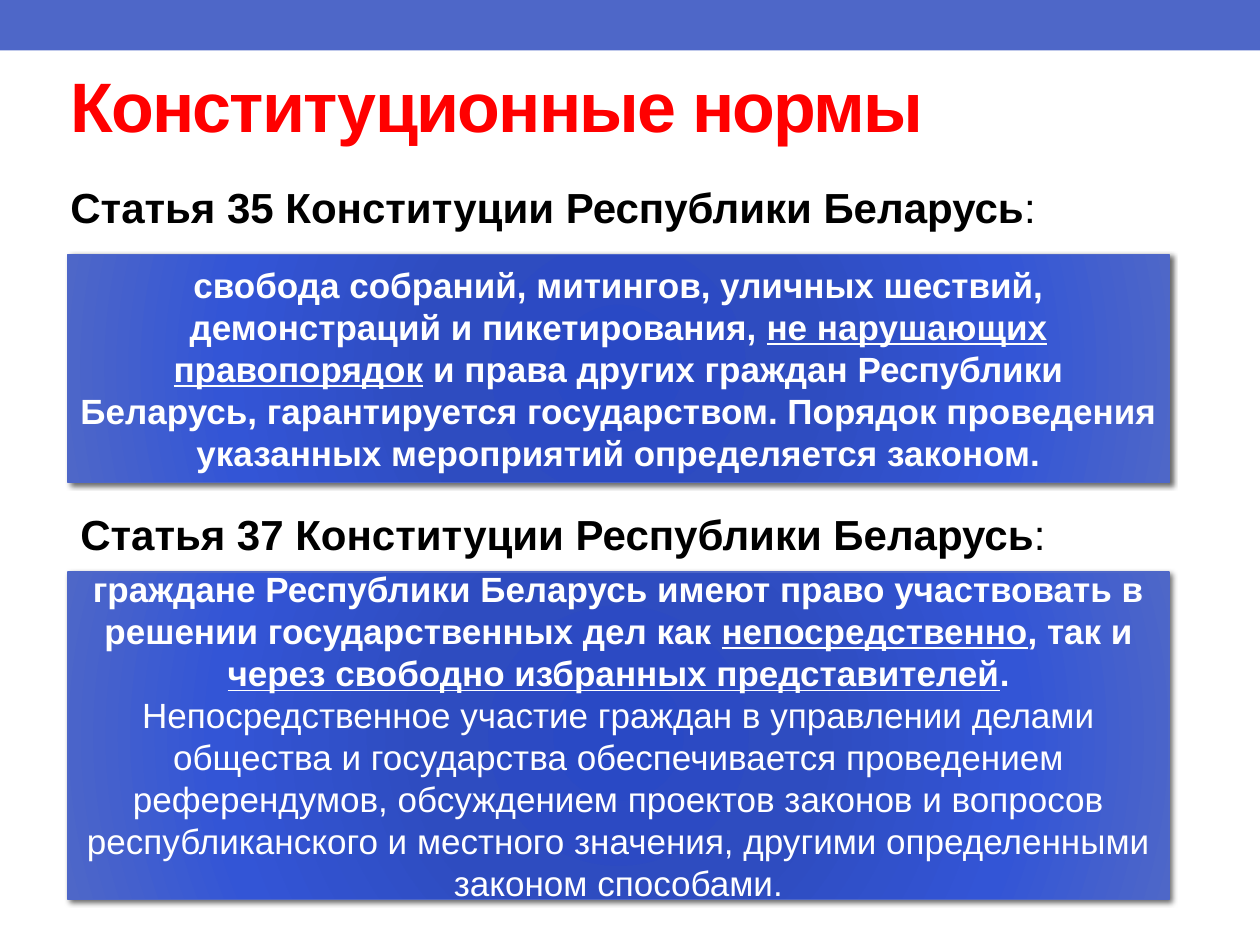
from dataclasses import dataclass

from lxml.etree import SubElement
from pptx import Presentation
from pptx.dml.color import RGBColor
from pptx.enum.shapes import MSO_SHAPE
from pptx.enum.text import MSO_ANCHOR, PP_ALIGN
from pptx.oxml import parse_xml
from pptx.oxml.ns import nsdecls, qn
from pptx.util import Cm, Pt


@dataclass(frozen=True)
class Theme:
    font: str = "Arial"
    accent: str = "4E67C8"
    title: str = "FF0000"
    heading: str = "000000"
    panel_text: str = "FFFFFF"
    shadow: str = "000000"
    gradient: tuple = ((0, "2949C5"), (34, "2E4CC0"), (70, "3355D6"), (100, "4E67C8"))
    title_size: int = 40
    heading_size: int = 24
    panel_size: int = 20


THEME = Theme()

# A run is (text, style letters): b = bold, u = underlined.
TITLE = [("Конституционные нормы", "b")]
ARTICLES = [
    {
        "heading": [("Статья 35 Конституции Республики Беларусь", "b"), (":", "")],
        "heading_box": (1.17, 3.53, 22.86, 1.6),
        "wrap": True,
        "panel": [
            ("свобода собраний, митингов, уличных шествий, демонстраций и пикетирования, ", "b"),
            ("не нарушающих правопорядок", "bu"),
            (" и права других граждан Республики Беларусь, гарантируется государством. "
             "Порядок проведения указанных мероприятий определяется законом.", "b"),
        ],
        "panel_top": 5.13,
        "panel_height": 4.6,
    },
    {
        "heading": [("Статья 37 Конституции Республики Беларусь", "b"), (":", "")],
        "heading_box": (1.37, 10.13, 20.17, 1.27),
        "wrap": False,
        "panel": [
            ("граждане Республики Беларусь имеют право участвовать в решении "
             "государственных дел как ", "b"),
            ("непосредственно", "bu"),
            (", так и ", "b"),
            ("через свободно избранных представителей", "bu"),
            (". ", "b"),
            ("Непосредственное участие граждан в управлении делами общества и государства "
             "обеспечивается проведением референдумов, обсуждением проектов законов и вопросов "
             "республиканского и местного значения, другими определенными законом способами.", ""),
        ],
        "panel_top": 11.53,
        "panel_height": 6.6,
    },
]
PANEL_LEFT, PANEL_WIDTH = 1.37, 22.2


def write_text(shape, runs, *, size, color, align=PP_ALIGN.LEFT,
               anchor=MSO_ANCHOR.TOP, wrap=True, spacing=None):
    """Fill a shape with one paragraph; spacing is in hundredths of a point."""
    frame = shape.text_frame
    frame.word_wrap = wrap
    frame.vertical_anchor = anchor
    paragraph = frame.paragraphs[0]
    paragraph.alignment = align
    for text, style in runs:
        run = paragraph.add_run()
        run.text = text
        font = run.font
        font.name = THEME.font
        font.size = Pt(size)
        font.bold = "b" in style
        font.underline = "u" in style
        font.color.rgb = RGBColor.from_string(color)
        if spacing is not None:
            font._element.set("spc", str(spacing))


def add_text(slide, box, runs, **text_format):
    shape = slide.shapes.add_textbox(*map(Cm, box))
    write_text(shape, runs, **text_format)


def add_rectangle(slide, box):
    shape = slide.shapes.add_shape(MSO_SHAPE.RECTANGLE, *map(Cm, box))
    shape.shadow.inherit = False
    shape.fill.solid()
    shape.fill.fore_color.rgb = RGBColor.from_string(THEME.accent)
    return shape


def add_panel(slide, box, runs):
    """Add a rectangle with a radial gradient, a soft shadow and centred text."""
    shape = add_rectangle(slide, box)
    shape.line.color.rgb = RGBColor.from_string(THEME.accent)
    shape.line.width = Pt(0.75)

    stops = "".join(
        f'<a:gs pos="{position * 1000}"><a:srgbClr val="{color}"/></a:gs>'
        for position, color in THEME.gradient)
    gradient = parse_xml(
        f'<a:gradFill {nsdecls("a")} rotWithShape="1"><a:gsLst>{stops}</a:gsLst>'
        '<a:path path="circle"><a:fillToRect l="100000" t="100000" r="100000" b="100000"/>'
        '</a:path></a:gradFill>')
    properties = shape._element.spPr
    properties.replace(properties.find(qn("a:solidFill")), gradient)

    shadow = SubElement(properties.find(qn("a:effectLst")), qn("a:outerShdw"),
                        blurRad=str(Pt(3)), dist=str(Pt(2)), dir=str(45 * 60000),
                        rotWithShape="0")
    color = SubElement(shadow, qn("a:srgbClr"), val=THEME.shadow)
    SubElement(color, qn("a:alpha"), val="60000")

    write_text(shape, runs, size=THEME.panel_size, color=THEME.panel_text,
               align=PP_ALIGN.CENTER, anchor=MSO_ANCHOR.MIDDLE)


def main():
    presentation = Presentation()
    presentation.slide_width, presentation.slide_height = Cm(25.4), Cm(19.05)
    slide = presentation.slides.add_slide(presentation.slide_layouts[6])

    add_rectangle(slide, (0, 0, 25.4, 1.02)).line.fill.background()
    add_text(slide, (1.17, 0.74, 22.86, 2.74), TITLE, size=THEME.title_size,
             color=THEME.title, anchor=MSO_ANCHOR.MIDDLE, spacing=-100)
    for article in ARTICLES:
        add_text(slide, article["heading_box"], article["heading"],
                 size=THEME.heading_size, color=THEME.heading,
                 align=PP_ALIGN.JUSTIFY, wrap=article["wrap"])
        add_panel(slide, (PANEL_LEFT, article["panel_top"], PANEL_WIDTH,
                          article["panel_height"]), article["panel"])
    presentation.save("out.pptx")


if __name__ == "__main__":
    main()
